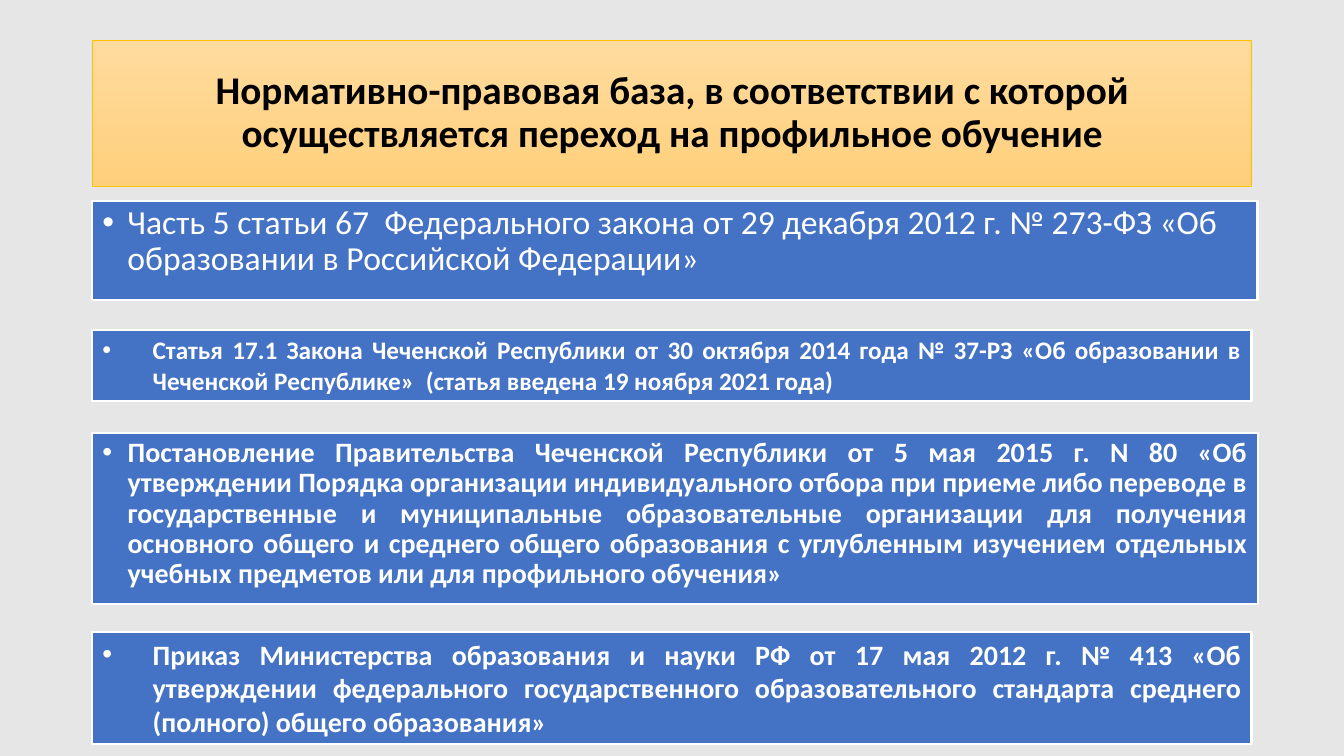
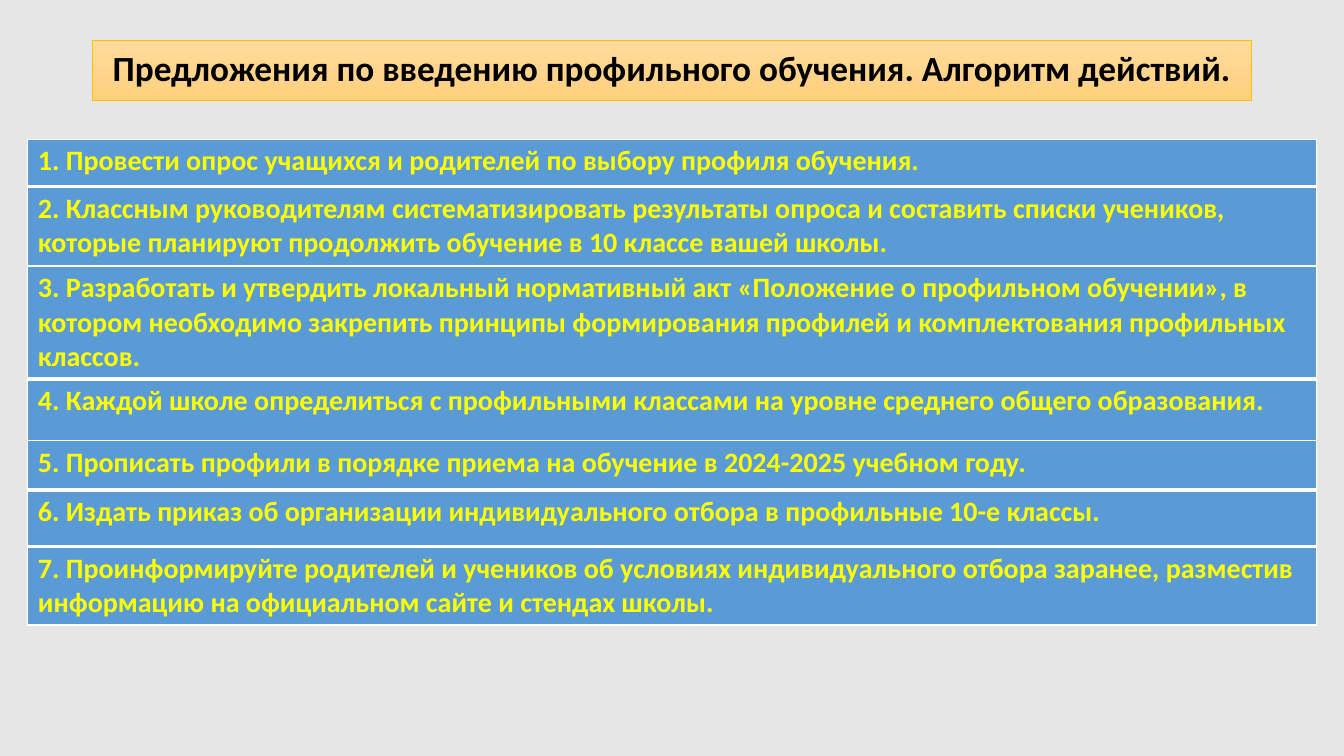
from lxml import etree
from pptx import Presentation
from pptx.dml.color import RGBColor
from pptx.enum import text
from pptx.oxml import ns
from pptx.util import Inches, Pt

FONT = "Calibri"
BACKGROUND = RGBColor(0xE7, 0xE6, 0xE6)
TITLE_TOP = RGBColor(0xFF, 0xDB, 0x9E)
TITLE_BOTTOM = RGBColor(0xFF, 0xD0, 0x7C)
TITLE_LINE = RGBColor(0xFF, 0xC0, 0x00)
LAW_BLUE = RGBColor(0x44, 0x72, 0xC4)
STEP_BLUE = RGBColor(0x5B, 0x9B, 0xD5)
YELLOW = RGBColor(0xFF, 0xFF, 0x00)
WHITE = RGBColor(0xFF, 0xFF, 0xFF)
BLACK = RGBColor(0x00, 0x00, 0x00)

PAGE_WIDTH = 40 / 3
TITLE_WIDTH = 11.5
TABLE_WIDTH = 12.78
LEFT = (PAGE_WIDTH - TITLE_WIDTH) / 2
TABLE_LEFT = (PAGE_WIDTH - TABLE_WIDTH) / 2
JUSTIFY, PLAIN = text.PP_ALIGN.JUSTIFY, text.PP_ALIGN.LEFT
GROW, FIXED = text.MSO_AUTO_SIZE.SHAPE_TO_FIT_TEXT, text.MSO_AUTO_SIZE.NONE


def add_span(para, words, size, color, bold=True):
    span = para.add_run()
    span.text = words
    span.font.name = FONT
    span.font.size = Pt(size)
    span.font.bold = bold
    span.font.color.rgb = color


def add_titled_page(layout, words, height, size):
    page = deck.slides.add_slide(deck.slide_layouts[layout])
    title = page.shapes.title
    title.left, title.top = Inches(LEFT), Inches(0.4)
    title.width, title.height = Inches(TITLE_WIDTH), Inches(height)
    title.fill.gradient()
    title.fill.gradient_angle = 270
    for stop, color in zip(title.fill.gradient_stops, (TITLE_TOP, TITLE_BOTTOM)):
        stop.color.rgb = color
    title.fill.gradient_stops[0].position = 0
    title.fill.gradient_stops[1].position = 1
    title.line.color.rgb = TITLE_LINE
    title.line.width = Pt(0.5)
    frame = title.text_frame
    frame.auto_size = FIXED
    frame.vertical_anchor = text.MSO_ANCHOR.MIDDLE
    para = frame.paragraphs[0]
    para.alignment = text.PP_ALIGN.CENTER
    para.line_spacing = 0.9
    add_span(para, words, size, BLACK)
    return page


deck = Presentation()
deck.slide_width, deck.slide_height = Inches(PAGE_WIDTH), Inches(7.5)
master_fill = deck.slide_master.background.fill
master_fill.solid()
master_fill.fore_color.rgb = BACKGROUND

# Slide 1: legal basis
page = add_titled_page(
    1,
    "Нормативно-правовая база, в соответствии с которой осуществляется переход на профильное обучение",
    1.45, 28)
body = page.placeholders[1]

# box, top, width, height, indent, size, bold, alignment, line spacing, space before, fit, words
laws = [
    (None, 1.99, 11.56, 0.99, 0.25, 24, False, PLAIN, 0.9, 10, FIXED,
     "Часть 5 статьи 67  Федерального закона от 29 декабря 2012 г. № 273-ФЗ "
     "«Об образовании в Российской Федерации»"),
    (None, 3.27, 11.5, 0.71, 0.5, 18, True, JUSTIFY, 1.0, 0, GROW,
     "Статья 17.1 Закона Чеченской Республики от 30 октября 2014 года № 37-РЗ "
     "«Об образовании в Чеченской Республике»  (статья введена 19 ноября 2021 года)"),
    (body, 4.3, 11.56, 1.69, 0.25, 20, True, JUSTIFY, 0.9, 10, FIXED,
     "Постановление Правительства Чеченской Республики от 5 мая 2015 г. N 80 "
     "«Об утверждении Порядка организации индивидуального отбора при приеме либо переводе "
     "в государственные и муниципальные образовательные организации для получения основного "
     "общего и среднего общего образования с углубленным изучением отдельных учебных предметов "
     "или для профильного обучения»"),
    (None, 6.27, 11.5, 1.11, 0.5, 20, True, JUSTIFY, 1.0, 0, GROW,
     "Приказ Министерства образования и науки РФ от 17 мая 2012 г. № 413 "
     "«Об утверждении федерального государственного образовательного стандарта "
     "среднего (полного) общего образования»"),
]
for box, top, width, height, indent, size, bold, align, spacing, before, fit, words in laws:
    box = box or page.shapes.add_textbox(0, 0, 0, 0)
    box.left, box.top = Inches(LEFT), Inches(top)
    box.width, box.height = Inches(width), Inches(height)
    box.fill.solid()
    box.fill.fore_color.rgb = LAW_BLUE
    box.line.color.rgb = WHITE
    box.line.width = Pt(1.5)
    frame = box.text_frame
    frame.word_wrap = True
    frame.auto_size = fit
    para = frame.paragraphs[0]
    para.alignment = align
    para.line_spacing = spacing
    para.space_before = Pt(before)
    props = para._p.get_or_add_pPr()
    props.set("marL", str(Inches(indent)))
    props.set("indent", str(-Inches(indent)))
    etree.SubElement(props, ns.qn("a:buFont")).set("typeface", "Arial")
    etree.SubElement(props, ns.qn("a:buChar")).set("char", "•")
    add_span(para, words, size, WHITE, bold)

# Slide 2: steps
page = add_titled_page(
    5, "Предложения по введению профильного обучения. Алгоритм действий.", 0.6, 25.2)

# table top, then height and words of each row; the last table overlaps the one before it
step_tables = [
    (1.38, [
        (0.47, "1. Провести опрос учащихся и родителей по выбору профиля обучения."),
        (0.77, "2. Классным руководителям систематизировать результаты опроса и составить списки "
               "учеников, которые планируют продолжить обучение в 10 классе вашей школы."),
    ]),
    (2.64, [
        (1.12, "3. Разработать и утвердить локальный нормативный акт «Положение о профильном "
               "обучении», в котором необходимо закрепить принципы формирования профилей и "
               "комплектования профильных классов."),
        (0.61, "4. Каждой школе определиться с профильными классами на уровне среднего общего "
               "образования."),
    ]),
    (4.97, [
        (0.45, ""),
        (0.77, "7. Проинформируйте родителей и учеников об условиях индивидуального отбора заранее, "
               "разместив информацию на официальном сайте и стендах школы."),
    ]),
    (4.37, [
        (0.49, "5. Прописать профили в порядке приема на обучение в 2024-2025 учебном году."),
        (0.55, "6. Издать приказ об организации индивидуального отбора в профильные 10-е классы."),
    ]),
]
for top, rows in step_tables:
    height = sum(row_height for row_height, _ in rows)
    table = page.shapes.add_table(
        len(rows), 1, Inches(TABLE_LEFT), Inches(top), Inches(TABLE_WIDTH), Inches(height)).table
    table.first_row = table.horz_banding = False
    for index, (row_height, words) in enumerate(rows):
        table.rows[index].height = Inches(row_height)
        cell = table.cell(index, 0)
        inner_edge = "lnT" if index else "lnB"
        for edge in ("lnL", "lnR", "lnT", "lnB"):
            line = etree.SubElement(cell._tc.get_or_add_tcPr(), ns.qn(f"a:{edge}"))
            line.set("w", str(Pt(3 if edge == inner_edge else 1)))
            paint = etree.SubElement(line, ns.qn("a:solidFill"))
            etree.SubElement(paint, ns.qn("a:srgbClr")).set("val", str(WHITE))
        cell.fill.solid()
        cell.fill.fore_color.rgb = STEP_BLUE
        if words:
            add_span(cell.text_frame.paragraphs[0], words, 20, YELLOW)

deck.save("out.pptx")
